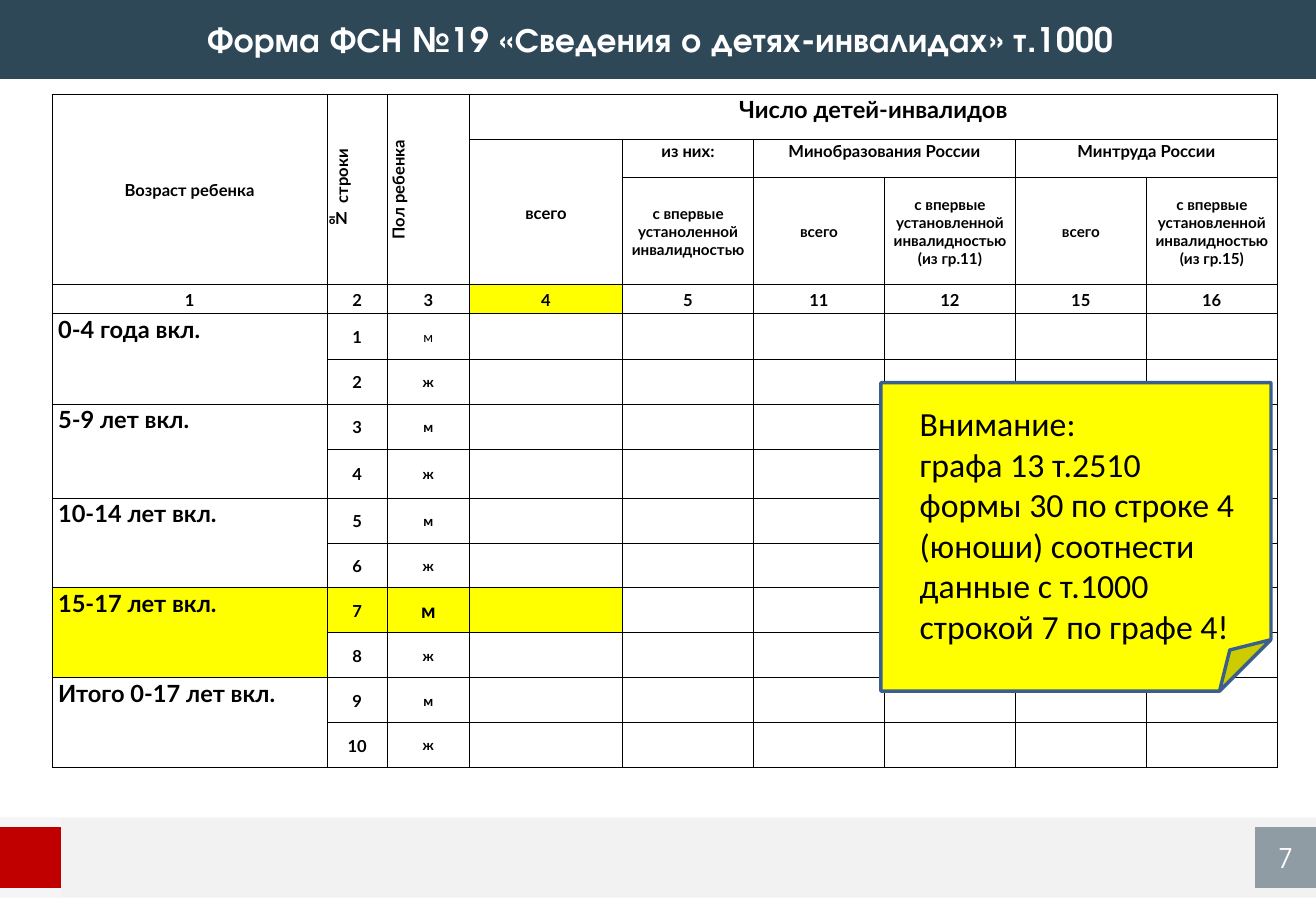
from dataclasses import dataclass
from typing import Optional

from lxml import etree
from pptx import Presentation, util as u
from pptx.dml.color import RGBColor
from pptx.enum import shapes, text as tx
from pptx.oxml import ns


@dataclass(frozen=True)
class Theme:
    navy: str = "2F4858"
    red: str = "C00000"
    gray: str = "F2F2F2"
    white: str = "FFFFFF"
    black: str = "000000"
    yellow: str = "FFFF00"
    edge: str = "3A5F8C"
    head: str = "TeX Gyre Adventor"
    body: str = "Lato"
    memo: str = "Calibri"
    title: float = 20
    page: float = 16
    group: float = 14
    accent: float = 12
    label: float = 9.8
    detail: float = 9
    sex: float = 8.2


@dataclass(frozen=True)
class Box:
    left: float
    top: float
    width: float
    height: float


@dataclass(frozen=True)
class Panel:
    box: Box
    fill: str
    alpha: int = 100


@dataclass(frozen=True)
class Entry:
    row: int
    col: int
    text: str
    size: float
    rows: int = 1
    cols: int = 1
    bold: bool = True
    top: bool = False
    left: bool = False
    turn: bool = False


T = Theme()
WIDE, HIGH = u.Inches(10.83), u.Inches(7.5)
COLS = [20.92, 4.55, 6.26, 11.63] + [9.95] * 5
ROWS = [4.96, 4.2, 11.74, 3.2] + [4.96] * 3 + [5.36] + [4.93] * 6
AGES = ["0-4 года вкл.", "5-9 лет вкл.", "10-14 лет вкл.", "15-17 лет вкл.", "Итого 0-17 лет вкл."]
MARKED = {(3, 3), (10, 0), (11, 0), (10, 1), (10, 2), (10, 3)}
FIRST = 4

PANELS = [
    Panel(Box(0, 89.73, 100, 8.8), T.gray),
    Panel(Box(0, 91, 100, 9), T.gray),
    Panel(Box(0, 0, 100, 8.67), T.navy),
    Panel(Box(0, 89.73, 4.62, 8.8), T.white, 30),
    Panel(Box(0, 90.8, 4.62, 6.67), T.red),
]
PANELS.pop(1)
PAGE = Panel(Box(95.38, 90.8, 4.62, 6.67), T.navy, 50)

HEADS = [
    Entry(0, 0, "Возраст ребенка", T.label, rows=3),
    Entry(0, 1, "№ строки", T.label, rows=3, turn=True),
    Entry(0, 2, "Пол ребенка", T.label, rows=3, turn=True),
    Entry(0, 3, "Число детей-инвалидов", T.group, cols=6, top=True),
    Entry(1, 3, "всего", T.label, rows=2),
    Entry(1, 4, "из них:", T.label, top=True),
    Entry(1, 5, "Минобразования России", T.label, cols=2, top=True),
    Entry(1, 7, "Минтруда России", T.label, cols=2, top=True),
    Entry(2, 4, "с впервые устаноленной инвалидностью", T.detail),
    Entry(2, 5, "всего", T.detail),
    Entry(2, 6, "с впервые установленной инвалидностью (из гр.11)", T.detail),
    Entry(2, 7, "всего", T.detail),
    Entry(2, 8, "с впервые установленной инвалидностью (из гр.15)", T.detail),
]


def place(box: Box) -> tuple[int, int, int, int]:
    return (int(WIDE * box.left / 100), int(HIGH * box.top / 100),
            int(WIDE * box.width / 100), int(HIGH * box.height / 100))


def put(frame, words: str, size: float, font: str = T.body, color: str = T.black,
        bold: bool = False, align=tx.PP_ALIGN.CENTER, track: Optional[int] = None) -> None:
    frame.word_wrap = True
    for num, line in enumerate(words.split("\n")):
        para = frame.add_paragraph() if num else frame.paragraphs[0]
        para.alignment = align
        run = para.add_run()
        run.text = line
        run.font.size = u.Pt(size)
        run.font.name = font
        run.font.bold = bold
        run.font.color.rgb = RGBColor.from_string(color)
        if track:
            run._r.get_or_add_rPr().set("spc", str(track))


def shape(slide, panel: Panel, kind=shapes.MSO_SHAPE.RECTANGLE):
    item = slide.shapes.add_shape(kind, *place(panel.box))
    item.shadow.inherit = False
    item.fill.solid()
    item.fill.fore_color.rgb = RGBColor.from_string(panel.fill)
    item.line.fill.background()
    if panel.alpha < 100:
        color = item._element.spPr.find(ns.qn("a:solidFill"))[0]
        etree.SubElement(color, ns.qn("a:alpha")).set("val", str(panel.alpha * 1000))
    return item


def label(slide, box: Box):
    return slide.shapes.add_textbox(*place(box)).text_frame


def style(cell, fill: str) -> None:
    props = cell._tc.get_or_add_tcPr()
    for side in ("lnL", "lnR", "lnT", "lnB"):
        line = etree.SubElement(props, ns.qn("a:" + side), w=str(u.Pt(0.5)))
        paint = etree.SubElement(line, ns.qn("a:solidFill"))
        etree.SubElement(paint, ns.qn("a:srgbClr"), val=T.black)
    cell.fill.solid()
    cell.fill.fore_color.rgb = RGBColor.from_string(fill)
    cell.margin_left = cell.margin_right = cell.margin_top = u.Inches(0.01)
    cell.margin_bottom = 0


def entries() -> list[Entry]:
    items = list(HEADS)
    for col, num in enumerate((1, 2, 3, 4, 5, 11, 12, 15, 16)):
        items.append(Entry(3, col, str(num), T.label))
    for num, age in enumerate(AGES):
        items.append(Entry(FIRST + 2 * num, 0, age, T.group, rows=2, top=True, left=True))
    for num in range(2 * len(AGES)):
        row = FIRST + num
        size = T.accent if (row, 2) in MARKED else T.sex
        items.append(Entry(row, 1, str(num + 1), T.label))
        items.append(Entry(row, 2, "жм"[num % 2 == 0], size, bold=num > 0))
    return items


def grid(slide) -> None:
    box = Box(3.95, 10.35, sum(COLS), sum(ROWS))
    table = slide.shapes.add_table(len(ROWS), len(COLS), *place(box)).table
    table.first_row = table.horz_banding = False
    for col, share in zip(table.columns, COLS):
        col.width = int(WIDE * share / 100)
    for row, share in zip(table.rows, ROWS):
        row.height = int(HIGH * share / 100)
    for row in range(len(ROWS)):
        for col in range(len(COLS)):
            style(table.cell(row, col), T.yellow if (row, col) in MARKED else T.white)
    for item in entries():
        cell = table.cell(item.row, item.col)
        if item.rows * item.cols > 1:
            cell.merge(table.cell(item.row + item.rows - 1, item.col + item.cols - 1))
        cell.vertical_anchor = tx.MSO_ANCHOR.TOP if item.top else tx.MSO_ANCHOR.MIDDLE
        if item.left:
            cell.margin_left = u.Inches(0.05)
        if item.turn:
            cell._tc.get_or_add_tcPr().set("vert", "vert270")
        align = tx.PP_ALIGN.LEFT if item.left else tx.PP_ALIGN.CENTER
        put(cell.text_frame, item.text, item.size, bold=item.bold, align=align)


def main() -> None:
    deck = Presentation()
    deck.slide_width, deck.slide_height = WIDE, HIGH
    slide = deck.slides.add_slide(deck.slide_layouts[6])
    for panel in PANELS:
        shape(slide, panel)
    page = shape(slide, PAGE).text_frame
    page.vertical_anchor = tx.MSO_ANCHOR.MIDDLE
    put(page, "7", T.page, T.head, T.white)

    title = label(slide, Box(6, 0, 88.37, 8.67))
    title.margin_left = title.margin_right = title.margin_top = title.margin_bottom = 0
    title.vertical_anchor = tx.MSO_ANCHOR.MIDDLE
    put(title, "Форма ФСН №19 «Сведения о детях-инвалидах» т.1000",
        T.title, T.head, T.white, bold=True, track=20)

    grid(slide)
    note = shape(slide, Panel(Box(66.94, 42, 29.64, 33.87), T.yellow), shapes.MSO_SHAPE.FOLDED_CORNER)
    note.line.color.rgb = RGBColor.from_string(T.edge)
    note.line.width = u.Pt(2)
    memo = label(slide, Box(68.98, 43.6, 26.78, 28.27))
    put(memo, "Внимание:\nграфа 13 т.2510 формы 30 по строке 4 (юноши) соотнести "
        "данные с т.1000 строкой 7 по графе 4!", T.title, T.memo, align=tx.PP_ALIGN.LEFT)
    deck.save("out.pptx")


if __name__ == "__main__":
    main()
